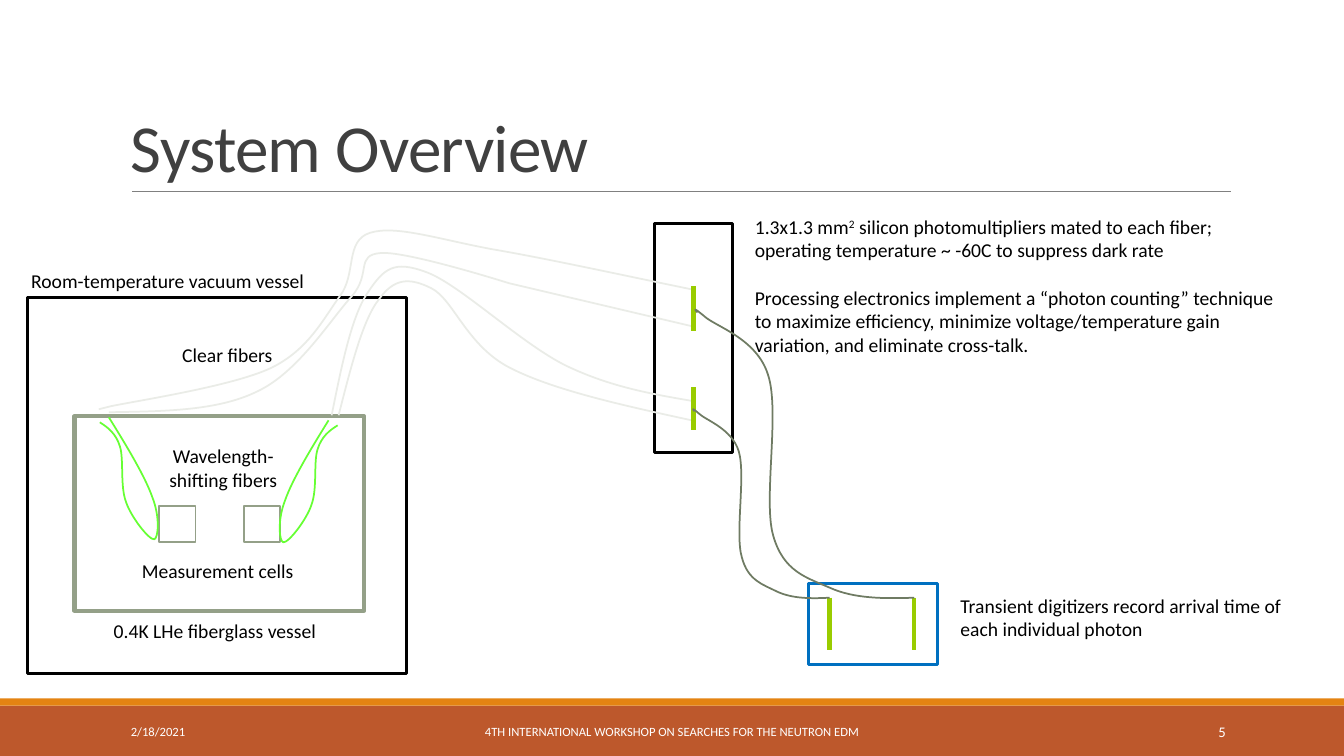
from dataclasses import dataclass

from lxml.etree import SubElement
from pptx import Presentation
from pptx.dml.color import RGBColor
from pptx.enum.shapes import MSO_CONNECTOR as Connector, MSO_SHAPE as Shape
from pptx.enum.text import MSO_ANCHOR as Anchor, PP_ALIGN as Align
from pptx.oxml.ns import qn
from pptx.slide import Slide
from pptx.util import Inches, Pt

Point = tuple[float, float]
SLIDE_WIDTH = 40 / 3


@dataclass(frozen=True)
class Theme:
    font: str = "Calibri"
    title_size: float = 48
    body_size: float = 14
    footer_size: float = 9
    number_size: float = 10.5
    title: str = "404040"
    black: str = "000000"
    white: str = "FFFFFF"
    rule: str = "808080"
    footer: str = "BD582C"
    accent: str = "E48312"
    vessel: str = "94A088"
    digitizer: str = "0070C0"
    board: str = "99CC00"
    shifting_fiber: str = "66FF33"
    clear_fiber: str = "EAECE7"
    cable: str = "6F7B63"


THEME = Theme()


@dataclass(frozen=True)
class Box:
    left: float
    top: float
    width: float
    height: float
    line: str = ""
    weight: float = 0
    fill: str = ""


@dataclass(frozen=True)
class Label:
    left: float
    top: float
    width: float
    height: float
    paragraphs: tuple[str, ...]
    size: float = THEME.body_size
    color: str = THEME.black
    align: Align = Align.LEFT
    anchor: Anchor = Anchor.TOP


@dataclass(frozen=True)
class Line:
    start: Point
    end: Point
    color: str
    weight: float


@dataclass(frozen=True)
class Curve:
    color: str
    start: Point
    segments: tuple[tuple[Point, ...], ...]


def curve(color: str, start: Point, *points: Point, straight: int = -1) -> Curve:
    segments, rest = [], points
    while rest:
        size = 1 if len(segments) == straight else 3
        segments.append(rest[:size])
        rest = rest[size:]
    return Curve(color, start, tuple(segments))


BARS = (Box(0, 7, SLIDE_WIDTH, 0.5, fill=THEME.footer),
        Box(0, 6.93, SLIDE_WIDTH, 0.07, fill=THEME.accent))
BOXES = (
    Box(0.74, 4.13, 2.87, 1.93, THEME.vessel, 3),
    Box(2.42, 5.02, 0.36, 0.36, THEME.vessel, 1.25),
    Box(1.58, 5.02, 0.36, 0.36, THEME.vessel, 1.25),
    Box(0.27, 2.95, 3.76, 3.73, THEME.black, 2.25),
    Box(6.49, 2.22, 0.78, 2.27, THEME.black, 2.25),
    Box(8.02, 5.79, 1.28, 0.8, THEME.digitizer, 2.25),
)
TITLE_RULE = Line((1.31, 1.9), (12.21, 1.9), THEME.rule, 0.5)
BOARDS = tuple(Line((x, top), (x, bottom), THEME.board, 3) for x, top, bottom in (
    (8.23, 5.93, 6.45), (9.07, 5.93, 6.45), (6.88, 2.84, 3.28), (6.88, 3.84, 4.27)))
TITLE = Label(1.2, 0.31, 10.12, 1.59, ("System Overview",), THEME.title_size,
              THEME.title, anchor=Anchor.BOTTOM)
FOOTERS = tuple(
    Label(left, 7.06, width, 0.4, (text,), size, THEME.white, align, Anchor.MIDDLE)
    for left, width, text, size, align in (
        (1.2, 2.7, "2/18/2021", THEME.footer_size, Align.LEFT),
        (4.03, 5.27, "4TH INTERNATIONAL WORKSHOP ON SEARCHES FOR THE NEUTRON EDM",
         THEME.footer_size, Align.CENTER),
        (10.83, 1.43, "5", THEME.number_size, Align.RIGHT)))
LABELS = (
    Label(9.43, 5.84, 3.63, 0.57,
          ("Transient digitizers record arrival time of each individual photon",)),
    Label(0.21, 2.62, 3.12, 0.34, ("Room-temperature vacuum vessel",)),
    Label(1.03, 6.09, 2.32, 0.34, ("0.4K LHe fiberglass vessel",)),
    Label(1.08, 5.5, 2.16, 0.34, ("Measurement cells",), align=Align.CENTER),
    Label(1.56, 4.36, 1.31, 0.57, ("Wavelength-shifting fibers",), align=Align.CENTER),
    Label(1.71, 3.35, 1.16, 0.34, ("Clear fibers",)),
)
DETECTOR_NOTE = Label(7.39, 2.08, 5.42, 1.51, (
    "1.3x1.3 mm^2^ silicon photomultipliers mated to each fiber;",
    "operating temperature ~ -60C to suppress dark rate",
    "Processing electronics implement a “photon counting” technique to maximize "
    "efficiency, minimize voltage/temperature gain variation, and eliminate cross-talk."))

LEFT_LOOP = (
    (1.08, 4.14), (1.26, 4.43), (1.44, 4.73), (1.51, 4.93), (1.59, 5.13), (1.57, 5.34),
    (1.53, 5.35), (1.48, 5.36), (1.3, 5.13), (1.25, 4.98), (1.19, 4.82), (1.23, 4.56),
    (1.19, 4.43), (1.15, 4.3), (1.07, 4.24), (0.99, 4.19))
RIGHT_LOOP = tuple((4.34 - x, y + 0.03) for x, y in LEFT_LOOP)
FIBERS = (
    curve(THEME.shifting_fiber, *RIGHT_LOOP),
    curve(THEME.shifting_fiber, *LEFT_LOOP),
    curve(THEME.clear_fiber, (3.36, 4.12), (3.48, 3.65), (3.6, 3.17), (3.76, 2.97),
          (3.91, 2.76), (4.06, 2.75), (4.28, 2.86), (4.5, 2.97), (4.63, 3.43),
          (5.06, 3.65), (5.49, 3.87), (6.17, 4.02), (6.86, 4.17)),
    curve(THEME.clear_fiber, (3.29, 4.12), (3.39, 3.62), (3.49, 3.13), (3.65, 2.9),
          (3.81, 2.66), (3.91, 2.58), (4.23, 2.7), (4.56, 2.82), (5.17, 3.41),
          (5.62, 3.63), (6.06, 3.84), (6.47, 3.91), (6.88, 3.98)),
    curve(THEME.clear_fiber, (1.08, 4.09), (1.62, 4.08), (2.16, 4.08), (2.56, 3.88),
          (2.96, 3.69), (3.28, 3.17), (3.49, 2.94), (3.69, 2.71), (3.52, 2.53),
          (3.78, 2.51), (4.04, 2.49), (5.05, 2.81), (5.05, 2.81), (6.88, 3.24), straight=4),
    curve(THEME.clear_fiber, (0.98, 4.06), (1.1, 4.03), (1.39, 3.97), (2.31, 3.83),
          (2.69, 3.65), (3.06, 3.47), (3.21, 3.16), (3.37, 2.94), (3.54, 2.72),
          (3.42, 2.39), (3.67, 2.31), (3.92, 2.23), (4.34, 2.37), (4.87, 2.47),
          (5.4, 2.56), (6.13, 2.72), (6.86, 2.87), straight=0),
)
CABLES = (
    curve(THEME.cable, (6.89, 4.08), (6.87, 4.06), (6.86, 4.04), (6.93, 4.1), (7, 4.17),
          (7.26, 4.25), (7.33, 4.48), (7.4, 4.72), (7.29, 5.3), (7.36, 5.53), (7.42, 5.76),
          (7.57, 5.8), (7.71, 5.87), (7.86, 5.94), (8.05, 5.94), (8.23, 5.93)),
    curve(THEME.cable, (6.92, 3.1), (6.89, 3.07), (6.87, 3.04), (6.99, 3.14), (7.1, 3.24),
          (7.51, 3.36), (7.62, 3.72), (7.74, 4.08), (7.57, 4.96), (7.67, 5.31), (7.77, 5.67),
          (8, 5.73), (8.23, 5.83), (8.47, 5.94), (8.77, 5.94), (9.07, 5.93)),
)


def rgb(color: str) -> RGBColor:
    return RGBColor.from_string(color)


def draw_box(slide: Slide, box: Box) -> None:
    shape = slide.shapes.add_shape(Shape.RECTANGLE, *map(
        Inches, (box.left, box.top, box.width, box.height)))
    shape.shadow.inherit = False
    shape.fill.background()
    shape.line.fill.background()
    if box.fill:
        shape.fill.solid()
        shape.fill.fore_color.rgb = rgb(box.fill)
    if box.line:
        shape.line.color.rgb = rgb(box.line)
        shape.line.width = Pt(box.weight)


def draw_line(slide: Slide, line: Line) -> None:
    connector = slide.shapes.add_connector(
        Connector.STRAIGHT, *map(Inches, (*line.start, *line.end)))
    connector.line.color.rgb = rgb(line.color)
    connector.line.width = Pt(line.weight)
    SubElement(connector._element.spPr, qn("a:effectLst"))


def sample(start: Point, segment: tuple[Point, ...], t: float) -> Point:
    a, b, c, d = (start, *segment) if len(segment) == 3 else (start, start, *segment * 2)
    return tuple(Inches(p * (1 - t) ** 3 + 3 * q * t * (1 - t) ** 2
                        + 3 * r * t * t * (1 - t) + s * t ** 3)
                 for p, q, r, s in zip(a, b, c, d))


def draw_curve(slide: Slide, item: Curve) -> None:
    starts = (item.start, *(segment[-1] for segment in item.segments))
    builder = slide.shapes.build_freeform(*map(Inches, item.start))
    builder.add_line_segments([sample(start, segment, step / 16) for start, segment
                               in zip(starts, item.segments) for step in range(1, 17)], False)
    shape = builder.convert_to_shape()
    outline = next(shape._element.iter(qn("a:path")))
    for vertex in outline.findall(qn("a:lnTo")):
        outline.remove(vertex)
    for segment in item.segments:
        command = SubElement(outline, qn("a:cubicBezTo" if len(segment) == 3 else "a:lnTo"))
        for x, y in segment:
            SubElement(command, qn("a:pt"), x=str(Inches(x) - shape.left),
                       y=str(Inches(y) - shape.top))
    shape.shadow.inherit = False
    shape.fill.background()
    shape.line.color.rgb = rgb(item.color)
    shape.line.width = Pt(1.25)


def draw_label(slide: Slide, label: Label) -> list:
    frame = slide.shapes.add_textbox(*map(
        Inches, (label.left, label.top, label.width, label.height))).text_frame
    frame.word_wrap = True
    frame.vertical_anchor = label.anchor
    for index, text in enumerate(label.paragraphs):
        paragraph = frame.add_paragraph() if index else frame.paragraphs[0]
        paragraph.alignment = label.align
        for part, content in enumerate(text.split("^")):
            run = paragraph.add_run()
            run.text = content
            if part % 2:
                run.font._element.set("baseline", "30000")
        paragraph.font.name = THEME.font
        paragraph.font.size = Pt(label.size)
        paragraph.font.color.rgb = rgb(label.color)
    return list(frame.paragraphs)


def main() -> None:
    presentation = Presentation()
    presentation.slide_width, presentation.slide_height = Inches(SLIDE_WIDTH), Inches(7.5)
    slide = presentation.slides.add_slide(presentation.slide_layouts[6])
    for box in BARS:
        draw_box(slide, box)
    draw_line(slide, TITLE_RULE)
    heading = draw_label(slide, TITLE)[0]
    heading.line_spacing = 0.85
    heading.runs[0].font._element.set("spc", "-50")
    for footer in FOOTERS:
        draw_label(slide, footer)
    for box in BOXES:
        draw_box(slide, box)
    draw_label(slide, DETECTOR_NOTE)[-1].space_before = Pt(17)
    for label in LABELS:
        draw_label(slide, label)
    for fiber in FIBERS:
        draw_curve(slide, fiber)
    for board in BOARDS:
        draw_line(slide, board)
    for cable in CABLES:
        draw_curve(slide, cable)
    presentation.save("out.pptx")


if __name__ == "__main__":
    main()
